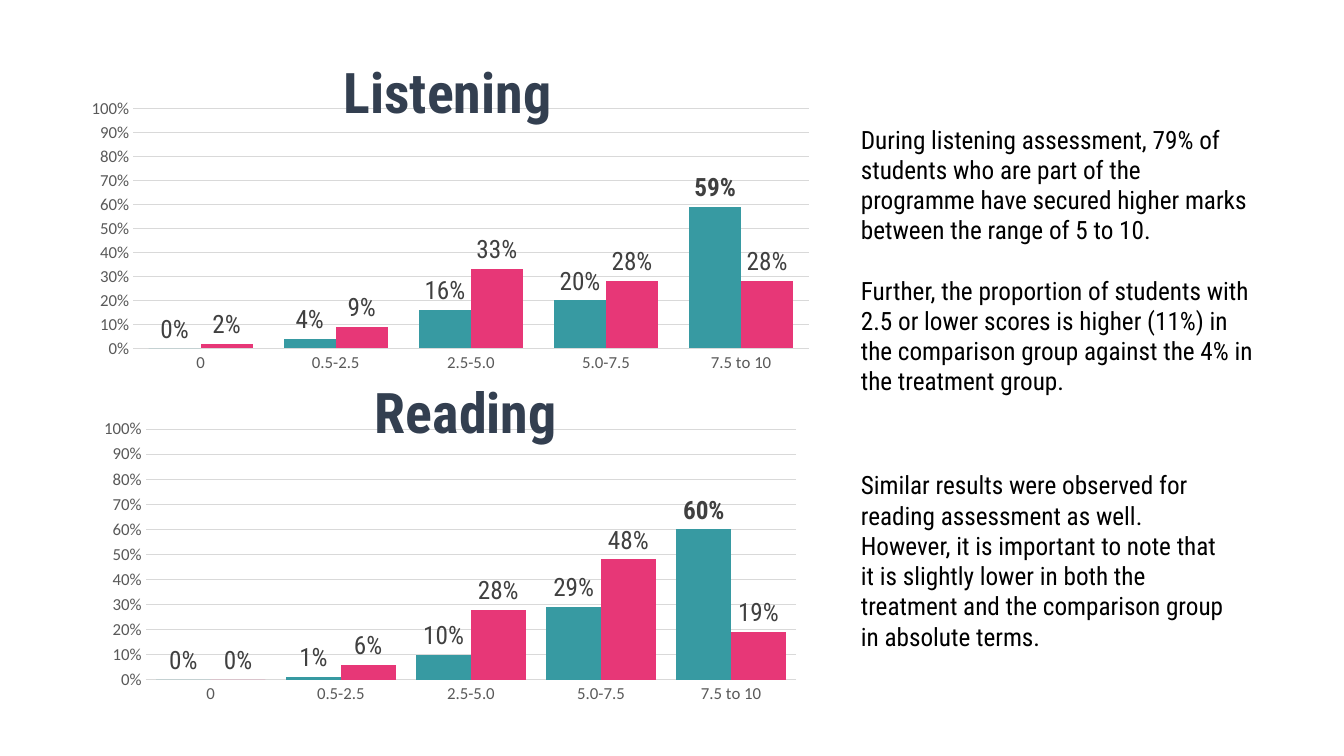
from pptx import Presentation
from pptx.chart.data import CategoryChartData
from pptx.dml.color import RGBColor
from pptx.enum.chart import XL_CHART_TYPE as CT, XL_LABEL_POSITION as LP, XL_TICK_MARK as TM
from pptx.enum.text import MSO_ANCHOR
from pptx.util import Inches, Pt

BANDS = ["0", "0.5-2.5", "2.5-5.0", "5.0-7.5", "7.5 to 10"]


def rgb(value):
    return RGBColor.from_string(value)


class ScoreSlide:
    FONT = "Roboto Condensed"
    AXIS_FONT = "Calibri"
    TREATMENT, COMPARISON = "379AA2", "E73777"
    TITLE, BODY, LABEL = "333F50", "000000", "404040"
    AXIS, GRID = "595959", "D9D9D9"

    def __init__(self, prs):
        self.slide = prs.slides.add_slide(prs.slide_layouts[6])

    def style(self, font, name, size, color, bold=False):
        font.name = name
        font.size = Pt(size)
        font.bold = bold
        font.color.rgb = rgb(color)

    def textbox(self, box, paragraphs, size, color, bold=False):
        tf = self.slide.shapes.add_textbox(*map(Inches, box)).text_frame
        tf.word_wrap = True
        for i, text in enumerate(paragraphs):
            p = tf.add_paragraph() if i else tf.paragraphs[0]
            p.text = text
            if i:
                p.space_before = Pt(21.6)
            self.style(p.runs[0].font, self.FONT, size, color, bold)
        return tf

    def title(self, left, top, text):
        tf = self.textbox((left, top, 2.58, 1.22), [text], 40, self.TITLE, True)
        tf.vertical_anchor = MSO_ANCHOR.MIDDLE
        tf.paragraphs[0].line_spacing = 0.9

    def commentary(self, box, *paragraphs):
        self.textbox(box, paragraphs, 18, self.BODY)

    def axis(self, axis):
        axis.major_tick_mark = axis.minor_tick_mark = TM.NONE
        self.style(axis.tick_labels.font, self.AXIS_FONT, 12, self.AXIS)

    def line(self, line):
        line.color.rgb = rgb(self.GRID)
        line.width = Pt(0.75)

    def labels(self, series):
        labels = series.data_labels
        labels.show_value = True
        labels.number_format = "0%"
        labels.number_format_is_linked = False
        labels.position = LP.OUTSIDE_END
        self.style(labels.font, self.FONT, 18, self.LABEL)

    def chart(self, box, gap, treatment, comparison):
        """Clustered columns with the treatment group's top band in bold."""
        data = CategoryChartData(number_format="0%")
        data.categories = BANDS
        data.add_series("Series 1", treatment)
        data.add_series("Series 2", comparison)
        chart = self.slide.shapes.add_chart(
            CT.COLUMN_CLUSTERED, *map(Inches, box), data).chart
        chart.has_legend = chart.has_title = False
        self.style(chart.font, self.AXIS_FONT, 10, self.BODY)

        self.axis(chart.category_axis)
        self.line(chart.category_axis.format.line)
        values = chart.value_axis
        self.axis(values)
        values.minimum_scale, values.maximum_scale = 0, 1
        values.major_unit = 0.1
        values.format.line.fill.background()
        self.line(values.major_gridlines.format.line)
        values.tick_labels.number_format = "0%"
        values.tick_labels.number_format_is_linked = False

        plot = chart.plots[0]
        plot.gap_width, plot.overlap = gap, 0
        plot.vary_by_categories = False
        for series, color in zip(plot.series, (self.TREATMENT, self.COMPARISON)):
            series.format.fill.solid()
            series.format.fill.fore_color.rgb = rgb(color)
            series.invert_if_negative = False
            self.labels(series)
        top = plot.series[0].points[len(BANDS) - 1].data_label
        self.style(top.font, self.FONT, 18, self.LABEL, True)
        top.position = LP.OUTSIDE_END


def main():
    prs = Presentation()
    prs.slide_width, prs.slide_height = Inches(13.33), Inches(7.5)
    s = ScoreSlide(prs)
    s.commentary(
        (8.44, 1.18, 4.13, 2.83),
        "During listening assessment, 79% of students who are part of the programme "
        "have secured higher marks between the range of 5 to 10.",
        "Further, the proportion of students with 2.5 or lower scores is higher (11%) "
        "in the comparison group against the 4% in the treatment group.")
    s.chart((0.76, 0.92, 7.41, 2.83), 60,
            (0, 0.04, 0.16, 0.2, 0.59), (0.02, 0.09, 0.33, 0.28, 0.28))
    s.title(3.31, 0.34, "Listening")
    s.commentary(
        (8.44, 4.61, 3.83, 1.92),
        "Similar results were observed for reading assessment as well. However, it is "
        "important to note that it is slightly lower in both the treatment and the "
        "comparison group in absolute terms.")
    s.chart((0.89, 4.1, 7.15, 2.94), 38,
            (0, 0.01, 0.1, 0.29, 0.6), (0, 0.06, 0.28, 0.48, 0.19))
    s.title(3.62, 3.51, "Reading")
    prs.save("out.pptx")


if __name__ == "__main__":
    main()
